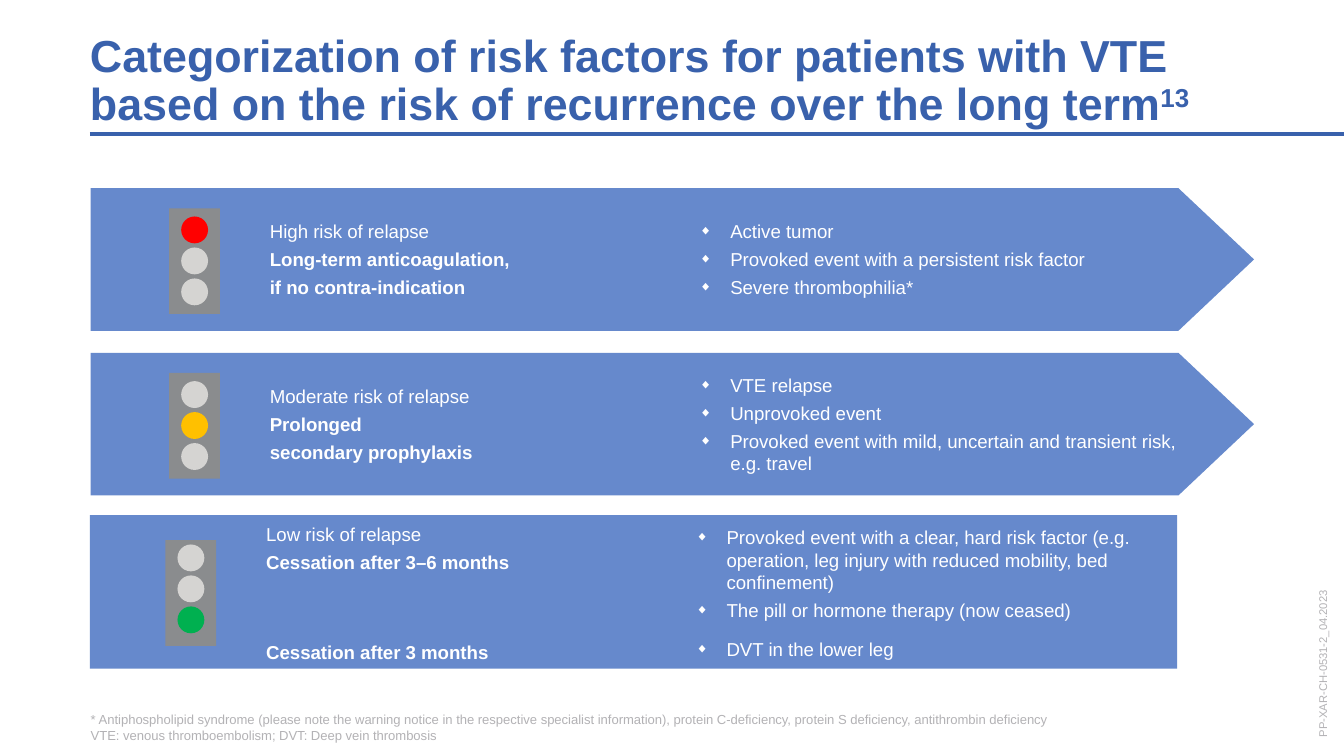
from dataclasses import dataclass

import pptx
import pptx.dml.color
import pptx.enum.shapes
import pptx.enum.text
import pptx.oxml
import pptx.oxml.ns
import pptx.util

Pt = pptx.util.Pt
SHAPE = pptx.enum.shapes.MSO_SHAPE
ANCHOR = pptx.enum.text.MSO_ANCHOR


@dataclass(frozen=True)
class Theme:
    font: str = "Arial"
    title: str = "3961AC"
    band: str = "6689CC"
    housing: str = "8A8C8E"
    lamp_off: str = "D5D4D2"
    red: str = "FF0000"
    amber: str = "FFC000"
    green: str = "00B050"
    text: str = "FFFFFF"
    note: str = "B3B2B5"
    title_size: float = 24
    text_size: float = 10
    note_size: float = 7
    code_size: float = 6


@dataclass(frozen=True)
class Risk:
    top: float
    height: float
    lamp: int
    lamp_color: str
    advice: tuple
    factors: tuple
    advice_gaps: tuple = (3, 3, 3)
    factor_gaps: tuple = (3, 3, 3)
    ongoing: bool = True


T = Theme()
LEFT = 48.6

RISKS = (
    Risk(100.8, 76.4, 0, T.red,
         ("High risk of relapse", "Long-term anticoagulation,", "if no contra-indication"),
         ("Active tumor", "Provoked event with a persistent risk factor",
          "Severe thrombophilia*")),
    Risk(189, 76.4, 1, T.amber,
         ("Moderate risk of relapse", "Prolonged", "secondary prophylaxis"),
         ("VTE relapse", "Unprovoked event",
          "Provoked event with mild, uncertain and transient risk, e.g. travel")),
    Risk(276, 82.2, 2, T.green,
         ("Low risk of relapse", "Cessation after 3–6 months", "Cessation after 3 months"),
         ("Provoked event with a clear, hard risk factor (e.g. operation, "
          "leg injury with reduced mobility, bed confinement)",
          "The pill or hormone therapy (now ceased)", "DVT in the lower leg"),
         advice_gaps=(3, 36, 36), factor_gaps=(3, 9, 3), ongoing=False),
)


def rgb(color):
    return pptx.dml.color.RGBColor.from_string(color)


def place(sp, left, top, width, height):
    sp.left, sp.top, sp.width, sp.height = Pt(left), Pt(top), Pt(width), Pt(height)


def add_solid(s, kind, box, color):
    sp = s.shapes.add_shape(kind, *map(Pt, box))
    sp.shadow.inherit = False
    sp.fill.solid()
    sp.fill.fore_color.rgb = rgb(color)
    sp.line.fill.background()
    return sp


def set_text(sp, text, size, color, bold=False, anchor=ANCHOR.MIDDLE, inset=0):
    tf = sp.text_frame
    tf.text = text
    tf.word_wrap = True
    tf.auto_size = pptx.enum.text.MSO_AUTO_SIZE.NONE
    tf.vertical_anchor = anchor
    tf.margin_left = tf.margin_right = 0
    tf.margin_top = tf.margin_bottom = Pt(inset)
    for p in tf.paragraphs:
        p.alignment = pptx.enum.text.PP_ALIGN.LEFT
        p.space_before = Pt(0)
        for r in p.runs:
            r.font.name, r.font.size, r.font.bold = T.font, Pt(size), bold
            r.font.color.rgb = rgb(color)
    return tf


def set_gaps(tf, gaps):
    for p, gap in zip(tf.paragraphs, gaps):
        p.space_after = Pt(gap)


def add_bullet(p):
    pPr = p._p.get_or_add_pPr()
    pPr.set("marL", str(Pt(16.6)))
    pPr.set("indent", str(-Pt(16.6)))
    ns = pptx.oxml.ns.nsdecls("a")
    for xml in (f'<a:buClr {ns}><a:srgbClr val="{T.text}"/></a:buClr>',
                f'<a:buSzPct {ns} val="70000"/>',
                f'<a:buFont {ns} typeface="{T.font}"/>',
                f'<a:buChar {ns} char="◆"/>'):
        pPr.append(pptx.oxml.parse_xml(xml))


def add_title(s):
    sp = s.shapes.title
    place(sp, 48.2, 17.3, 652.3, 52.6)
    tf = set_text(sp, "Categorization of risk factors for patients with VTE based on "
                  "the risk of recurrence over the long term",
                  T.title_size, T.title, bold=True, anchor=ANCHOR.BOTTOM)
    p = tf.paragraphs[0]
    p.line_spacing = 0.9
    r = p.add_run()
    r.text = "13"
    r.font.name, r.font.size, r.font.bold = T.font, Pt(T.title_size), True
    r.font.color.rgb = rgb(T.title)
    r._r.get_or_add_rPr().set("baseline", "30000")

    rule = s.shapes.add_connector(pptx.enum.shapes.MSO_CONNECTOR.STRAIGHT,
                                  Pt(48.2), Pt(72), Pt(720), Pt(72))
    rule.line.color.rgb = rgb(T.title)
    rule.line.width = Pt(2.25)
    rule.element.spPr.append(pptx.oxml.parse_xml(
        f'<a:effectLst {pptx.oxml.ns.nsdecls("a")}/>'))


def add_traffic_light(s, left, top, lamp_inset, lit, color):
    add_solid(s, SHAPE.RECTANGLE, (left, top, 27.2, 56.6), T.housing)
    for i in range(3):
        box = (left + 6.5, top + lamp_inset + i * 16.6, 14.4, 14.4)
        add_solid(s, SHAPE.OVAL, box, color if i == lit else T.lamp_off)


def add_risk(s, risk, body):
    """Draw one band with its light, advice and the list of factors in body."""
    if risk.ongoing:
        left = LEFT
        band = add_solid(s, SHAPE.PENTAGON, (left, risk.top, 623.2, risk.height), T.band)
        band.adjustments[0] = 0.53
        add_traffic_light(s, left + 42, risk.top + 10.8, 4.4, risk.lamp, risk.lamp_color)
    else:
        left = LEFT - 2
        add_solid(s, SHAPE.RECTANGLE, (48.2, risk.top, 582.5, risk.height), T.band)
        add_traffic_light(s, left + 42, risk.top + 13.4, 2.3, risk.lamp, risk.lamp_color)

    text_top = risk.top if risk.ongoing else risk.top + 1.4
    text_height = risk.height if risk.ongoing else risk.height - 1.4
    sp = s.shapes.add_textbox(Pt(left + 96), Pt(text_top), Pt(201.6), Pt(text_height))
    tf = set_text(sp, "\n".join(risk.advice), T.text_size, T.text, inset=3.6)
    set_gaps(tf, risk.advice_gaps)
    for p in tf.paragraphs[1:]:
        p.runs[0].font.bold = True

    body.element.getparent().append(body.element)  # bring in front of the band
    place(body, left + 326, text_top, 255.6, text_height)
    tf = set_text(body, "\n".join(risk.factors), T.text_size, T.text, inset=3.6)
    set_gaps(tf, risk.factor_gaps)
    for p in tf.paragraphs:
        add_bullet(p)


def add_footnote(body):
    place(body, LEFT, 380.9, 622.8, 17.3)
    set_text(body, "* Antiphospholipid syndrome (please note the warning notice in the "
             "respective specialist information), protein C-deficiency, protein S "
             "deficiency, antithrombin deficiency\v"
             "VTE: venous thromboembolism; DVT: Deep vein thrombosis",
             T.note_size, T.note, anchor=ANCHOR.BOTTOM)


def add_document_code(s):
    sp = s.shapes.add_textbox(Pt(658.1), Pt(333.4), Pt(100.8), Pt(22.3))
    sp.rotation = 270
    set_text(sp, "PP-XAR-CH-0531-2_04.2023", T.code_size, T.note)


def main():
    prs = pptx.Presentation()
    prs.slide_width, prs.slide_height = Pt(720), Pt(405)
    s = prs.slides.add_slide(prs.slide_layouts.get_by_name("Comparison"))
    footnote, *lists = [sp for sp in s.placeholders if sp.placeholder_format.idx > 0]
    add_document_code(s)
    add_title(s)
    add_footnote(footnote)
    for risk, body in zip(RISKS, lists):
        add_risk(s, risk, body)
    prs.save("out.pptx")


if __name__ == "__main__":
    main()
